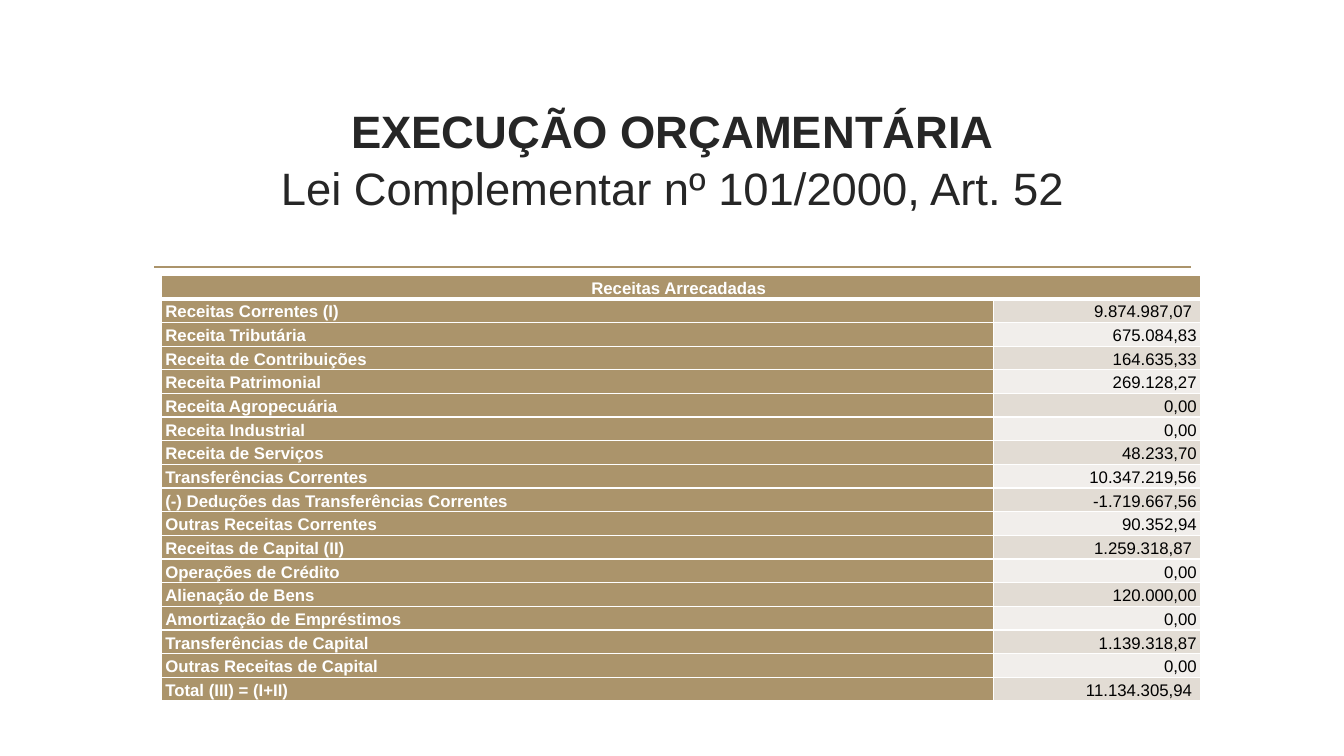
from lxml import etree
from pptx import Presentation
from pptx.dml.color import RGBColor
from pptx.enum import shapes, text
from pptx.oxml import ns
from pptx.util import Inches, Pt

GOLD = RGBColor(0xAB, 0x94, 0x6B)
SAND = RGBColor(0xE2, 0xDC, 0xD4)
PALE = RGBColor(0xF1, 0xEE, 0xEB)
WHITE = RGBColor(0xFF, 0xFF, 0xFF)
BLACK = RGBColor(0, 0, 0)
INK = RGBColor(0x26, 0x26, 0x26)
LEFT, MID, RIGHT = text.PP_ALIGN.LEFT, text.PP_ALIGN.CENTER, text.PP_ALIGN.RIGHT

HEAD = "Receitas Arrecadadas "
ROWS = [
    ("Receitas Correntes (I)", "9.874.987,07 "),
    ("Receita Tributária", "675.084,83"),
    ("Receita de Contribuições", "164.635,33"),
    ("Receita Patrimonial", "269.128,27"),
    ("Receita Agropecuária", "0,00"),
    ("Receita Industrial", "0,00"),
    ("Receita de Serviços", "48.233,70"),
    ("Transferências Correntes", "10.347.219,56"),
    ("(-) Deduções das Transferências Correntes", "-1.719.667,56"),
    ("Outras Receitas Correntes", "90.352,94"),
    ("Receitas de Capital (II)", "1.259.318,87 "),
    ("Operações de Crédito", "0,00"),
    ("Alienação de Bens", "120.000,00"),
    ("Amortização de Empréstimos", "0,00"),
    ("Transferências de Capital", "1.139.318,87"),
    ("Outras Receitas de Capital", "0,00"),
    ("Total (III) = (I+II)", "11.134.305,94 "),
]


def style(font, size, color, bold):
    font.name = "Arial"
    font.size = Pt(size)
    font.color.rgb = color
    font.bold = bold


def add_title(slide):
    title = slide.shapes.title
    title.left, title.top = Inches(1.42), Inches(1.07)
    title.width, title.height = Inches(10.5), Inches(0.93)
    frame = title.text_frame
    frame.text = "EXECUÇÃO ORÇAMENTÁRIA\vLei Complementar nº 101/2000, Art. 52"
    frame.word_wrap = True
    frame.auto_size = text.MSO_AUTO_SIZE.NONE
    frame.vertical_anchor = text.MSO_ANCHOR.MIDDLE
    frame.margin_top = Inches(0.1)
    para = frame.paragraphs[0]
    para.alignment = MID
    para.line_spacing = 1.05
    for run, bold in zip(para.runs, (True, False)):
        style(run.font, 32.4, INK, bold)


def add_rule(slide):
    rule = slide.shapes.add_connector(
        shapes.MSO_CONNECTOR.STRAIGHT,
        Inches(1.53), Inches(2.65), Inches(11.81), Inches(2.65))
    rule.line.color.rgb = GOLD
    rule.line.width = Pt(1.25)
    etree.SubElement(rule.element.spPr, ns.qn("a:effectLst"))


def add_edges(cell, base):
    props = cell._tc.get_or_add_tcPr()
    for side, width in (("L", 1), ("R", 1), ("T", 1), ("B", base)):
        edge = etree.SubElement(props, ns.qn("a:ln" + side), w=str(Pt(width)))
        fill = etree.SubElement(edge, ns.qn("a:solidFill"))
        etree.SubElement(fill, ns.qn("a:srgbClr"), val=str(WHITE))


def fill_cell(cell, words, align, fill, color, bold, base=1):
    add_edges(cell, base)
    cell.fill.solid()
    cell.fill.fore_color.rgb = fill
    cell.vertical_anchor = text.MSO_ANCHOR.MIDDLE
    cell.margin_left = cell.margin_right = Inches(0.04)
    cell.margin_top = cell.margin_bottom = Inches(0.01)
    para = cell.text_frame.paragraphs[0]
    para.text = words
    para.alignment = align
    para.line_spacing = 1.15
    style(para.font, 12, color, bold)
    for run in para.runs:
        style(run.font, 12, color, bold)


def add_table(slide):
    count = len(ROWS) + 1
    table = slide.shapes.add_table(
        count, 2, Inches(1.6), Inches(2.73),
        Inches(10.31), Inches(0.23 * count)).table
    table.columns[0].width = Inches(8.25)
    table.columns[1].width = Inches(2.06)
    for row in table.rows:
        row.height = Inches(0.23)
    table.cell(0, 0).merge(table.cell(0, 1))
    for col, words in enumerate((HEAD, "")):
        fill_cell(table.cell(0, col), words, MID, GOLD, WHITE, True, 3)
    for num, (name, value) in enumerate(ROWS, 1):
        band = SAND if num % 2 else PALE
        fill_cell(table.cell(num, 0), name, LEFT, GOLD, WHITE, True)
        fill_cell(table.cell(num, 1), value, RIGHT, band, BLACK, False)


def main():
    deck = Presentation()
    deck.slide_width, deck.slide_height = Inches(13.33), Inches(7.5)
    slide = deck.slides.add_slide(deck.slide_layouts[5])
    add_rule(slide)
    add_title(slide)
    add_table(slide)
    deck.save("out.pptx")


if __name__ == "__main__":
    main()
